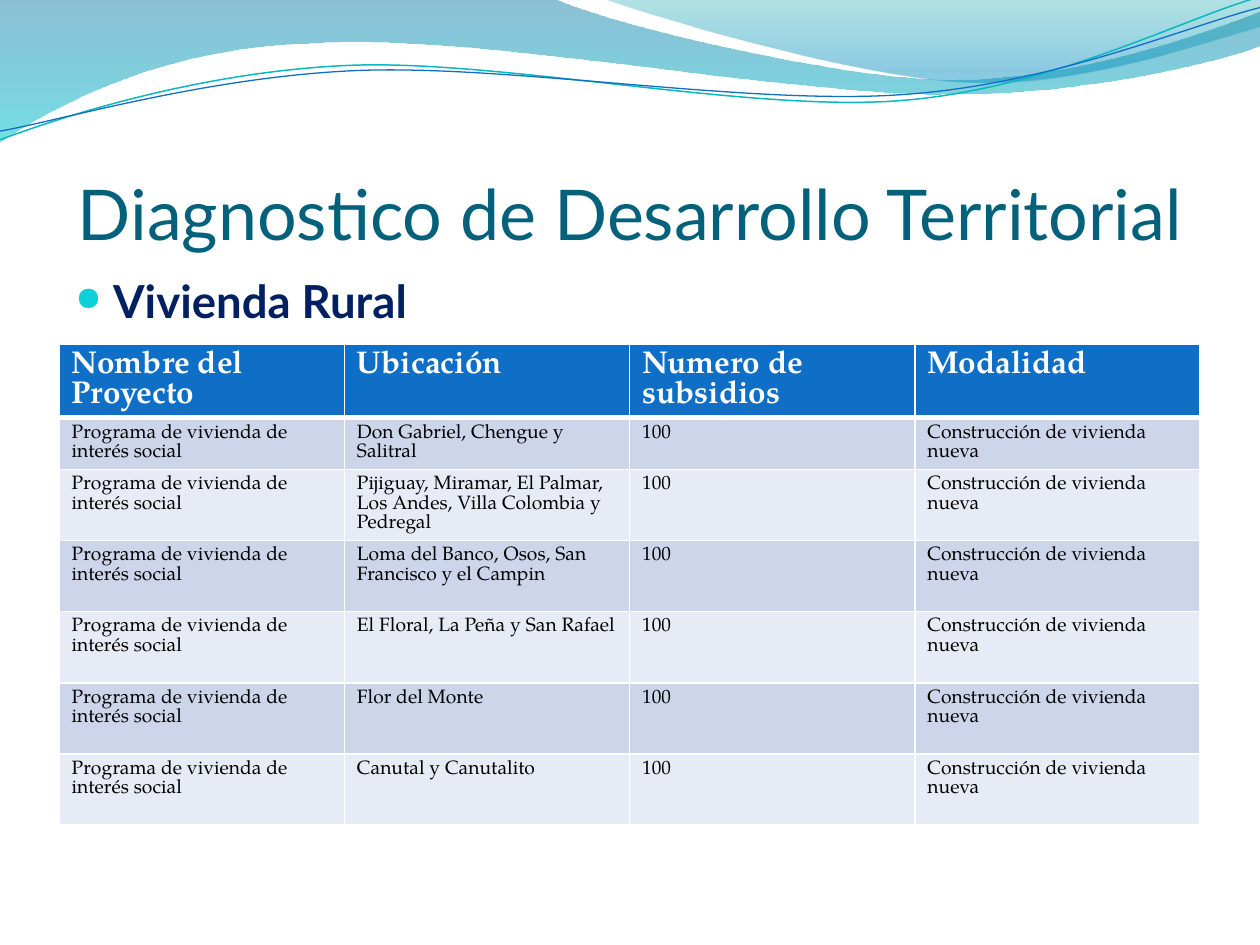
import pptx
import pptx.util
import pptx.dml.color
import pptx.enum.text
import pptx.oxml.ns
from lxml import etree

Pt = pptx.util.Pt
qn = pptx.oxml.ns.qn


def rgb(code):
    return pptx.dml.color.RGBColor.from_string(code)


def draw(start, parts, closed):
    pen = slide.shapes.build_freeform(Pt(start[0]), Pt(start[1]))
    for part in parts:
        pairs = zip(part[::2], part[1::2])
        pen.add_line_segments([(Pt(x), Pt(y)) for x, y in pairs], close=False)
    if closed:
        pen.add_line_segments([], close=True)
    shape = pen.convert_to_shape()
    shape.shadow.inherit = False
    steps = shape._element.spPr.findall(".//" + qn("a:lnTo"))
    for part in parts:
        group, steps = steps[:len(part) // 2], steps[len(part) // 2:]
        if len(group) == 3:
            curve = etree.Element(qn("a:cubicBezTo"))
            group[0].addprevious(curve)
            for step in group:
                curve.append(step[0])
                step.getparent().remove(step)
    return shape


deck = pptx.Presentation()
deck.slide_width, deck.slide_height = Pt(720), Pt(540)
slide = deck.slides.add_slide(deck.slide_layouts[5])

waves = [
    ((0, -0.5), [
        (316.8, -0.7),
        (342.7, 12.2, 478.1, 45.4, 545.8, 45.4),
        (614.2, 45.4, 689.8, 18.7, 720, 6.5),
        (720.7, 25.9),
        (707.8, 31.7, 626.4, 54.7, 537.1, 54),
        (447.8, 54, 275, 20.2, 185, 24.5),
        (92.9, 25.9, 33.1, 59.8, -0.7, 81.4),
    ], [(0, "0074A1", 45), (1, "00C6CF", 55)]),
    ((344.9, -0.7), [
        (366.5, 7.9, 491, 44.6, 553.7, 46.8),
        (616.3, 49.7, 691.9, 23, 720, 15.1),
        (720, 0),
    ], [(0, "00A1A9", 30), (0.8, "008BBF", 45)]),
]
for start, parts, stops in waves:
    wave = draw(start, parts, True)
    wave.line.fill.background()
    wave.fill.gradient()
    wave.fill.gradient_angle = 270
    for stop, (place, color, _) in zip(wave.fill.gradient_stops, stops):
        stop.position = place
        stop.color.rgb = rgb(color)
    tints = wave._element.spPr.iter(qn("a:srgbClr"))
    for tint, (_, _, alpha) in zip(tints, stops):
        etree.SubElement(tint, qn("a:alpha"), val=str(alpha * 1000))

lines = [
    ((0, 79.9), [
        (34.6, 67, 113.8, 41, 199.4, 37.4),
        (284.4, 33.8, 427, 64.1, 513.4, 57.6),
        (599.8, 51.1, 675.4, 10.8, 718.6, -1.4),
    ], "0AB8BF", 0.85),
    ((0, 74.9), [
        (33.8, 69.1, 118.1, 43.9, 203.8, 40.3),
        (290.2, 36.7, 429.8, 60.5, 516.2, 54),
        (601.9, 48.2, 677.5, 15.1, 720, 4.3),
    ], "0F6FC6", 0.75),
]
for start, parts, color, width in lines:
    line = draw(start, parts, False)
    line.fill.background()
    line.line.color.rgb = rgb(color)
    line.line.width = Pt(width)

title = slide.shapes.title
slide.shapes._spTree.append(title._element)
title.left, title.top, title.width, title.height = Pt(36), Pt(55.5), Pt(648), Pt(90)
frame = title.text_frame
frame.text = "Diagnostico de Desarrollo Territorial"
frame.auto_size = pptx.enum.text.MSO_AUTO_SIZE.NONE
frame.vertical_anchor = pptx.enum.text.MSO_ANCHOR.BOTTOM
frame.margin_left = frame.margin_right = frame.margin_bottom = 0
frame.margin_top = Pt(3.6)
frame.paragraphs[0].alignment = pptx.enum.text.PP_ALIGN.CENTER
font = frame.paragraphs[0].runs[0].font
font.name, font.size, font.color.rgb = "Lato", Pt(40), rgb("04617B")

body = slide.shapes.add_textbox(Pt(36), Pt(152.5), Pt(648), Pt(345.6))
body.text_frame.word_wrap = True
body.text_frame.text = "Vivienda Rural"
para = body.text_frame.paragraphs[0]
font = para.runs[0].font
font.name, font.size, font.bold = "Lato", Pt(26), True
font.color.rgb = rgb("002060")
props = para._p.get_or_add_pPr()
props.set("marL", str(Pt(21.6)))
props.set("indent", str(Pt(-21.6)))
tint = etree.SubElement(props, qn("a:buClr"))
etree.SubElement(tint, qn("a:srgbClr"), val="0BD0D9")
etree.SubElement(props, qn("a:buSzPct"), val="73000")
etree.SubElement(props, qn("a:buChar"), char="●")

places = [
    "Don Gabriel, Chengue y Salitral",
    "Pijiguay, Miramar, El Palmar, Los Andes, Villa Colombia y Pedregal",
    "Loma del Banco, Osos, San Francisco y el Campin",
    "El Floral, La Peña y San Rafael",
    "Flor del Monte",
    "Canutal y Canutalito",
]
rows = [["Nombre del Proyecto", "Ubicación", "Numero de subsidios", "Modalidad"]]
for place in places:
    rows.append(["Programa de vivienda de interés social", place, "100",
                 "Construcción de vivienda nueva"])
heights = [42, 29.5] + [40.7] * 5
table = slide.shapes.add_table(len(rows), 4, Pt(33.8), Pt(196.7), Pt(652), Pt(sum(heights))).table
for col in table.columns:
    col.width = Pt(163)
for r, texts in enumerate(rows):
    table.rows[r].height = Pt(heights[r])
    head = r == 0
    fill = "0F6FC6" if head else ("E7EBF5", "CCD5EA")[r % 2]
    for c, text in enumerate(texts):
        cell = table.cell(r, c)
        cell.text = text
        cell.margin_bottom = Pt(3)
        para = cell.text_frame.paragraphs[0]
        para.line_spacing = Pt(17.6 if head else 11.15)
        font = para.runs[0].font
        font.name, font.bold = "TeX Gyre Pagella", head
        font.size = Pt(18 if head else 11)
        font.color.rgb = rgb("FFFFFF" if head else "000000")
        props = cell._tc.get_or_add_tcPr()
        for side in "LRTB":
            thick = (r, side) in [(0, "B"), (1, "T")]
            edge = etree.SubElement(props, qn("a:ln" + side), w=str(Pt(3 if thick else 1)))
            paint = etree.SubElement(edge, qn("a:solidFill"))
            etree.SubElement(paint, qn("a:srgbClr"), val="FFFFFF")
        cell.fill.solid()
        cell.fill.fore_color.rgb = rgb(fill)

deck.save("out.pptx")
